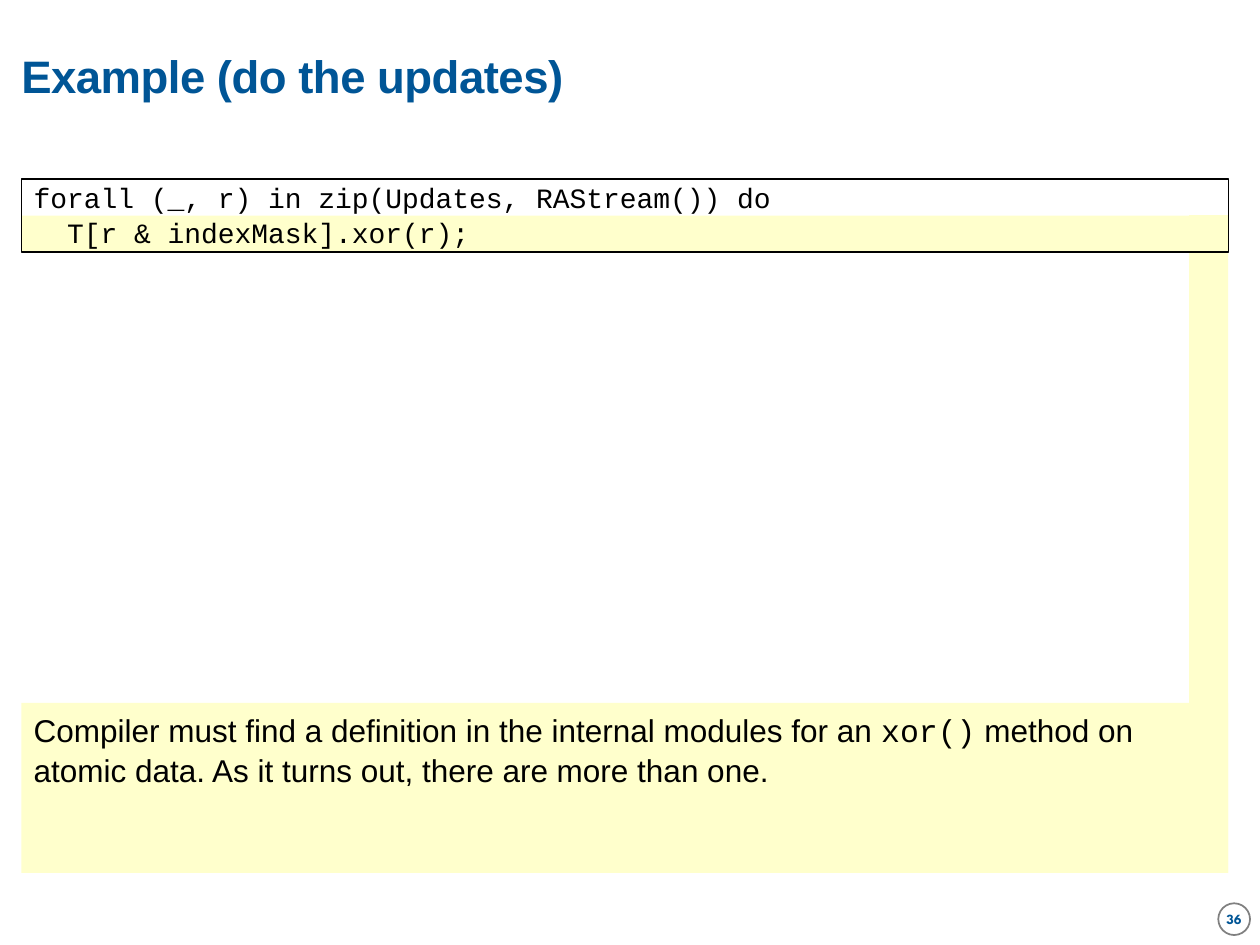
from pptx import Presentation
from pptx.dml.color import RGBColor
from pptx.enum.shapes import MSO_SHAPE
from pptx.enum.text import MSO_ANCHOR, PP_ALIGN
from pptx.util import Cm, Pt

BLACK, WHITE, BLUE, GREY, YELLOW = "000000", "FFFFFF", "005596", "808080", "FFFFCC"
SANS, MONO, BADGE = "Arial", "Courier New", "League Spartan"


def color(value):
    return RGBColor.from_string(value)


def add_box(page, box, fill=None, line=None, width=0.75, kind=MSO_SHAPE.RECTANGLE):
    shape = page.shapes.add_shape(kind, *[Cm(length) for length in box])
    shape.shadow.inherit = False
    if fill:
        shape.fill.solid()
        shape.fill.fore_color.rgb = color(fill)
    else:
        shape.fill.background()
    if line:
        shape.line.color.rgb = color(line)
        shape.line.width = Pt(width)
    else:
        shape.line.fill.background()
    return shape


def set_frame(shape, anchor=MSO_ANCHOR.TOP, side=0, top=0, wrap=True):
    frame = shape.text_frame
    frame.word_wrap = wrap
    frame.vertical_anchor = anchor
    frame.margin_left = frame.margin_right = Cm(side)
    frame.margin_top, frame.margin_bottom = Cm(top), 0
    return frame


def write(para, runs, size, ink=BLACK, bold=False, align=PP_ALIGN.LEFT, spacing=1.05):
    para.alignment = align
    para.line_spacing = spacing
    for text, font in runs:
        span = para.add_run()
        span.text = text
        span.font.name = font
        span.font.size = Pt(size)
        span.font.bold = bold
        span.font.color.rgb = color(ink)


def add_title(page, box, text):
    shape = page.shapes.add_textbox(*[Cm(length) for length in box])
    para = set_frame(shape, MSO_ANCHOR.MIDDLE).paragraphs[0]
    write(para, [(text, SANS)], 26, BLUE, True, spacing=0.85)
    para.runs[0].font._element.set("spc", "-30")


def add_code(page, box, lines, marked):
    left, top, width, height = box
    row = height / len(lines)
    add_box(page, (left, top + marked * row, width, row), YELLOW)
    frame = set_frame(add_box(page, box, line=BLACK), side=0.25, wrap=False)
    for index, text in enumerate(lines):
        para = frame.add_paragraph() if index else frame.paragraphs[0]
        write(para, [(text, MONO)], 16)


def add_comment(page, box, runs, band_top, band_width):
    left, top, width, height = box
    band_left = left + width - band_width
    add_box(page, (band_left, band_top, band_width, top + height - band_top), YELLOW)
    frame = set_frame(add_box(page, box, YELLOW), side=0.25, top=0.13)
    write(frame.paragraphs[0], runs, 18)


def add_page_number(page, box, number):
    shape = add_box(page, box, WHITE, GREY, 1, MSO_SHAPE.OVAL)
    frame = set_frame(shape, MSO_ANCHOR.MIDDLE, wrap=False)
    write(frame.paragraphs[0], [(number, BADGE)], 8, BLUE, True, PP_ALIGN.CENTER, 1)


def main():
    deck = Presentation()
    deck.slide_width, deck.slide_height = Cm(25.4), Cm(19.05)
    page = deck.slides.add_slide(deck.slide_layouts[6])
    left, width = 0.43, 24.33

    add_title(page, (left, 0.43, 20.32, 2.34), "Example (do the updates)")
    add_comment(
        page,
        (left, 14.17, width, 3.43),
        [
            ("Compiler must find a definition in the internal modules for an ", SANS),
            ("xor()", MONO),
            (" method on atomic data. As it turns out, there are more than one.", SANS),
        ],
        band_top=4.34,
        band_width=0.79,
    )
    add_code(
        page,
        (left, 3.61, width, 1.47),
        ["forall (_, r) in zip(Updates, RAStream()) do", "  T[r & indexMask].xor(r);"],
        marked=1,
    )
    add_page_number(page, (24.56, 18.21, 0.64, 0.64), "36")
    deck.save("out.pptx")


if __name__ == "__main__":
    main()
